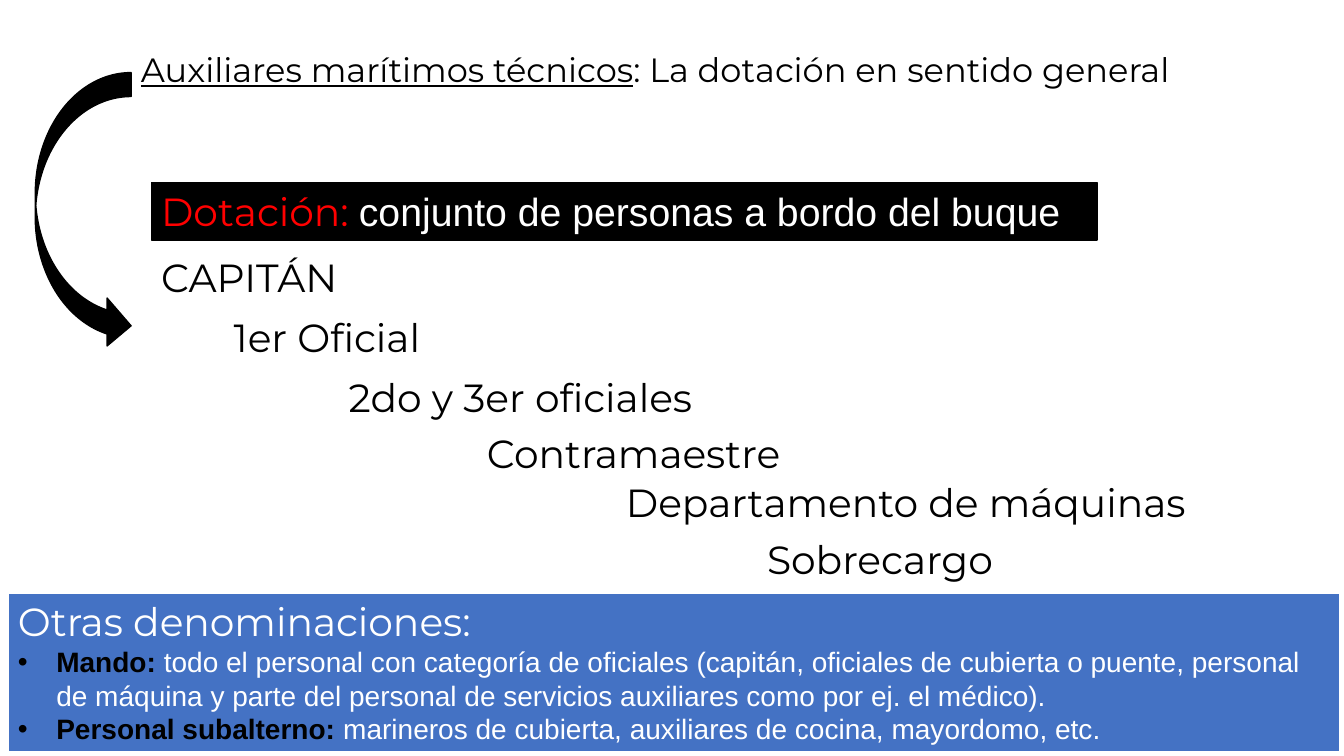
from dataclasses import dataclass
from lxml.etree import SubElement
from pptx import Presentation
from pptx.dml.color import RGBColor
from pptx.enum.shapes import MSO_SHAPE
from pptx.enum.text import MSO_ANCHOR, MSO_AUTO_SIZE, PP_ALIGN
from pptx.oxml.ns import qn
from pptx.util import Inches, Pt


@dataclass(frozen=True)
class Theme:
    black: str = "000000"
    white: str = "FFFFFF"
    red: str = "FF0000"
    blue: str = "4472C4"
    heading_font: str = "Montserrat"
    body_font: str = "Arial"
    title_size: int = 24
    rank_size: int = 28
    body_size: int = 20


@dataclass(frozen=True)
class Box:
    column: float
    row: float
    columns: float
    rows: float

    def inner(self, column, row, columns, rows):
        return Box(self.column + column, self.row + row, columns, rows)

    def lengths(self):
        return [cells(n) for n in (self.column, self.row, self.columns, self.rows)]


THEME = Theme()
CELL = 0.1
RANK_ROWS = 5.7
RANKS = [
    ("CAPITÁN", 0, 0, 21.7),
    ("1er Oficial", 7.2, 6, 24.3),
    ("2do y 3er oficiales", 18.6, 11.9, 41.5),
    ("Contramaestre", 32.3, 17.5, 34.1),
    ("Departamento de máquinas", 46.1, 22.4, 61.2),
    ("Sobrecargo", 60.1, 28, 26.8),
]
DENOMINATIONS = [
    ("Mando:", " todo el personal con categoría de oficiales (capitán, oficiales de "
     "cubierta o puente, personal de máquina y parte del personal de servicios "
     "auxiliares como por ej. el médico)."),
    ("Personal subalterno:",
     " marineros de cubierta, auxiliares de cocina, mayordomo, etc."),
]


def cells(count):
    return Inches(count * CELL)


def add_run(paragraph, text, size, color, font=THEME.heading_font, bold=False, underline=False):
    run = paragraph.add_run()
    run.text = text
    run.font.size = Pt(size)
    run.font.name = font
    run.font.color.rgb = RGBColor.from_string(color)
    run.font.bold = bold
    run.font.underline = underline


def add_label(slide, box, wrap=False):
    frame = slide.shapes.add_textbox(*box.lengths()).text_frame
    frame.word_wrap = wrap
    frame.auto_size = MSO_AUTO_SIZE.SHAPE_TO_FIT_TEXT
    return frame.paragraphs[0]


def add_panel(slide, box, preset, fill, line, line_width):
    panel = slide.shapes.add_shape(preset, *box.lengths())
    panel.shadow.inherit = False
    panel.fill.solid()
    panel.fill.fore_color.rgb = RGBColor.from_string(fill)
    panel.line.color.rgb = RGBColor.from_string(line)
    panel.line.width = Pt(line_width)
    return panel


def add_text_panel(slide, box, fill, line, line_width, wrap):
    frame = add_panel(slide, box, MSO_SHAPE.RECTANGLE, fill, line, line_width).text_frame
    frame.word_wrap = wrap
    frame.auto_size = MSO_AUTO_SIZE.SHAPE_TO_FIT_TEXT
    frame.vertical_anchor = MSO_ANCHOR.TOP
    frame.paragraphs[0].alignment = PP_ALIGN.LEFT
    return frame


def add_bullet(paragraph):
    paragraph.alignment = PP_ALIGN.LEFT
    properties = paragraph._p.get_or_add_pPr()
    indent = Inches(0.38)
    properties.set("marL", str(indent))
    properties.set("indent", str(-indent))
    SubElement(properties, qn("a:buFont"), typeface=THEME.body_font)
    SubElement(properties, qn("a:buChar"), char="•")


def build_title(slide, box):
    title = add_label(slide, box, wrap=True)
    title.alignment = PP_ALIGN.JUSTIFY
    add_run(title, "Auxiliares marítimos técnicos", THEME.title_size, THEME.black, underline=True)
    add_run(title, ": La dotación en sentido general", THEME.title_size, THEME.black)


def build_definition(slide, box):
    definition = add_text_panel(slide, box, THEME.black, THEME.black, 1, wrap=False).paragraphs[0]
    add_run(definition, "Dotación: ", THEME.rank_size, THEME.red)
    add_run(definition, "conjunto de personas a bordo del buque",
            THEME.rank_size, THEME.white, THEME.body_font)


def build_ranks(slide, box):
    for rank, column, row, columns in RANKS:
        label = add_label(slide, box.inner(column, row, columns, RANK_ROWS))
        add_run(label, rank, THEME.rank_size, THEME.black)


def build_denominations(slide, box):
    frame = add_text_panel(slide, box, THEME.blue, THEME.white, 1.5, wrap=True)
    add_run(frame.paragraphs[0], "Otras denominaciones:", THEME.rank_size, THEME.white)
    for term, meaning in DENOMINATIONS:
        entry = frame.add_paragraph()
        add_bullet(entry)
        add_run(entry, term, THEME.body_size, THEME.black, THEME.body_font, bold=True)
        add_run(entry, meaning, THEME.body_size, THEME.white, THEME.body_font)


def main():
    deck = Presentation()
    deck.slide_width, deck.slide_height = Inches(13.33), Inches(7.5)
    slide = deck.slides.add_slide(deck.slide_layouts[6])
    build_title(slide, Box(13, 4.4, 118.3, 5))
    add_panel(slide, Box(3.5, 7.2, 9.5, 27.5), MSO_SHAPE.CURVED_RIGHT_ARROW,
              THEME.black, THEME.black, 1)
    build_definition(slide, Box(15, 18.1, 93.8, RANK_ROWS))
    build_ranks(slide, Box(15, 24.6, 107.3, 33.7))
    build_denominations(slide, Box(0.8, 58.8, 132.1, 15.8))
    deck.save("out.pptx")


if __name__ == "__main__":
    main()
